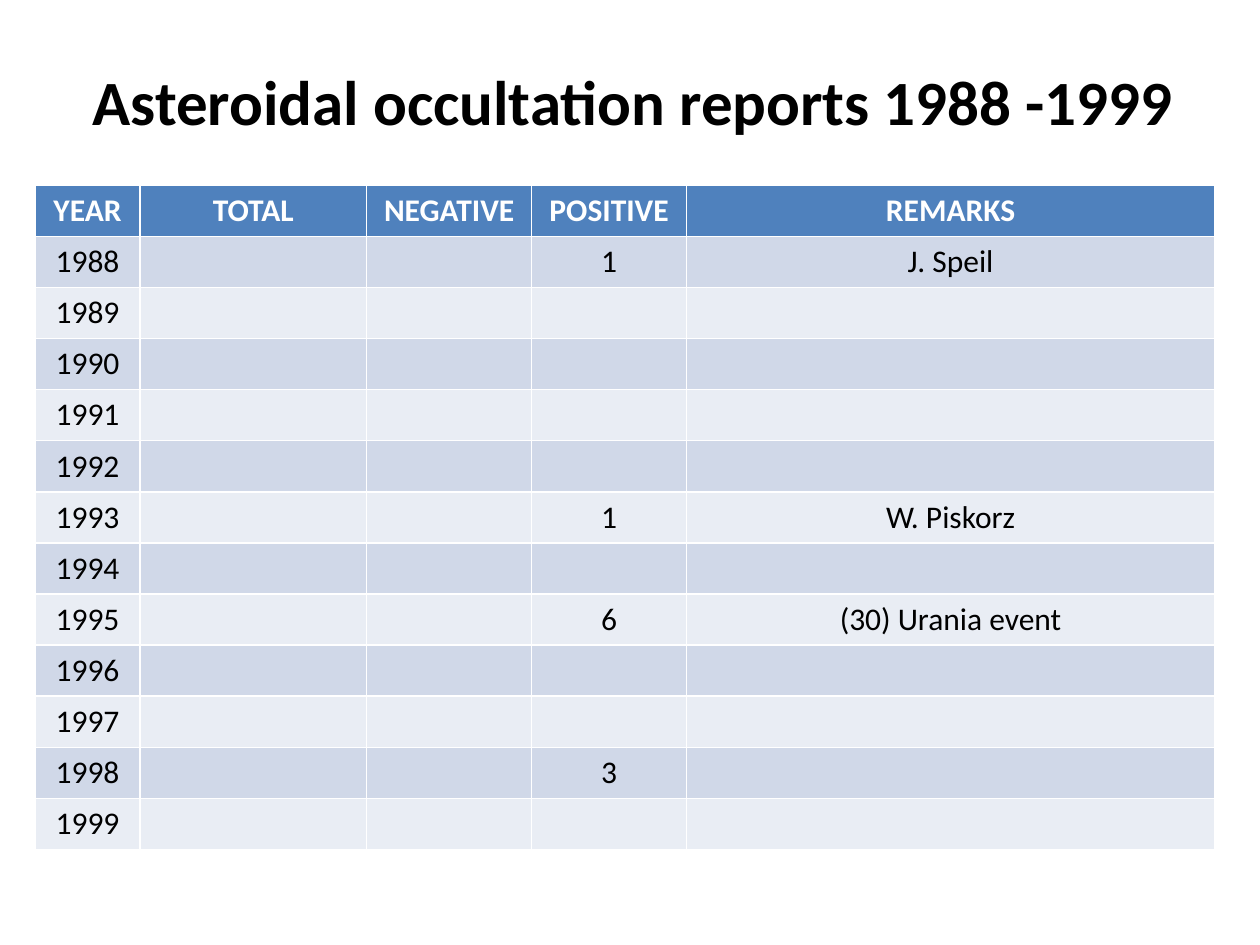
from dataclasses import dataclass

from pptx import Presentation
from pptx.dml.color import RGBColor
from pptx.enum.text import MSO_ANCHOR as Anchor, PP_ALIGN as Align
from pptx.util import Inches, Pt


@dataclass(frozen=True)
class Theme:
    font: str = "Calibri"
    title_size: int = 36
    table_size: int = 18
    ink: str = "000000"
    header_ink: str = "FFFFFF"
    header_fill: str = "4F81BD"
    bands: tuple[str, str] = ("D0D8E8", "E9EDF4")


@dataclass(frozen=True)
class Report:
    year: int
    positive: str = ""
    remarks: str = ""

    def cells(self) -> tuple[str, ...]:
        return str(self.year), "", "", self.positive, self.remarks


THEME = Theme()
HEADINGS = ("YEAR", "TOTAL", "NEGATIVE", "POSITIVE", "REMARKS")
COLUMN_WIDTHS = (0.83, 1.8, 1.31, 1.23, 4.19)
POSITIVE_COLUMN = HEADINGS.index("POSITIVE")
TABLE_HEIGHT = 5.27
FINDINGS = {
    1988: ("1", "J. Speil"),
    1993: ("1", "W. Piskorz"),
    1995: ("6", "(30) Urania event"),
    1998: ("3", ""),
}
REPORTS = [Report(year, *FINDINGS.get(year, ())) for year in range(1988, 2000)]


def style_paragraph(para, size: int, color: str, bold: bool) -> None:
    para.alignment = Align.CENTER
    para.font.name = THEME.font
    para.font.size = Pt(size)
    para.font.bold = bold
    para.font.color.rgb = RGBColor.from_string(color)


def add_title(page, text: str) -> None:
    title = page.shapes.title
    title.left, title.top = Inches(0.43), Inches(0.36)
    title.width, title.height = Inches(9.19), Inches(0.87)
    title.text_frame.text = text
    title.text_frame.vertical_anchor = Anchor.MIDDLE
    style_paragraph(title.text_frame.paragraphs[0], THEME.title_size, THEME.ink, True)


def fill_row(table, index: int, texts: tuple[str, ...], fill: str, ink: str, bold: bool) -> None:
    for column, text in enumerate(texts):
        cell = table.cell(index, column)
        cell.fill.solid()
        cell.fill.fore_color.rgb = RGBColor.from_string(fill)
        cell.text = text
        if index and column == POSITIVE_COLUMN:
            cell.vertical_anchor = Anchor.MIDDLE
        style_paragraph(cell.text_frame.paragraphs[0], THEME.table_size, ink, bold)


def add_report_table(page, reports: list[Report]) -> None:
    row_count = len(reports) + 1
    table = page.shapes.add_table(
        row_count, len(HEADINGS), Inches(0.28), Inches(1.47),
        Inches(sum(COLUMN_WIDTHS)), Inches(TABLE_HEIGHT),
    ).table
    for column, width in zip(table.columns, COLUMN_WIDTHS):
        column.width = Inches(width)
    for row in table.rows:
        row.height = Inches(TABLE_HEIGHT / row_count)

    fill_row(table, 0, HEADINGS, THEME.header_fill, THEME.header_ink, True)
    for index, report in enumerate(reports):
        band = THEME.bands[index % len(THEME.bands)]
        fill_row(table, index + 1, report.cells(), band, THEME.ink, False)


def main() -> None:
    deck = Presentation()
    deck.slide_width, deck.slide_height = Inches(10), Inches(7.5)
    page = deck.slides.add_slide(deck.slide_layouts.get_by_name("Title Only"))
    add_title(page, "Asteroidal occultation reports 1988 -1999")
    add_report_table(page, REPORTS)
    deck.save("out.pptx")


if __name__ == "__main__":
    main()
